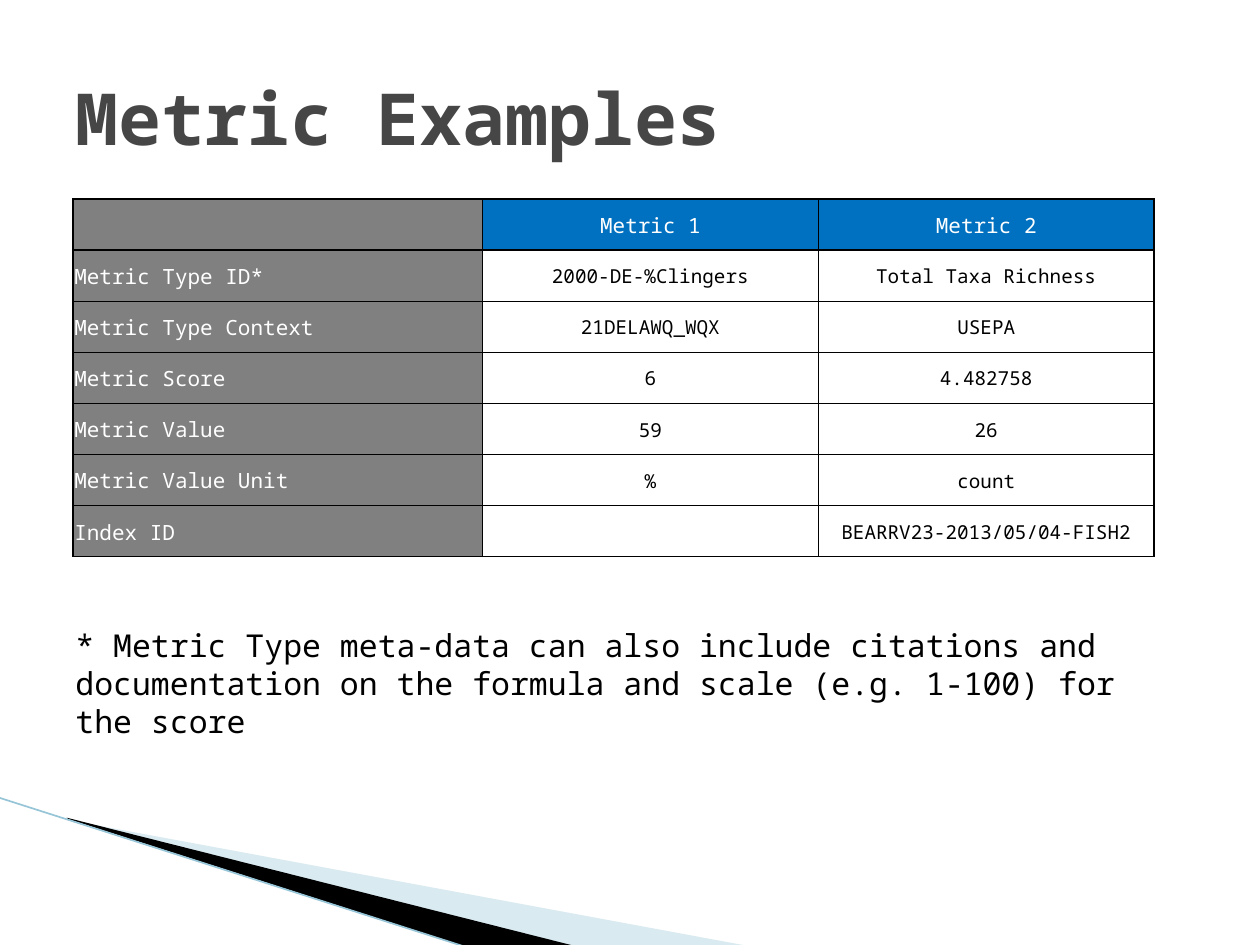
from lxml.etree import SubElement
from pptx import Presentation
from pptx.dml.color import RGBColor
from pptx.enum.shapes import MSO_CONNECTOR
from pptx.enum.text import MSO_ANCHOR, PP_ALIGN
from pptx.oxml.ns import qn
from pptx.util import Inches, Pt

FONT = "Noto Sans Mono"
COLORS = {
    "title": "464646",
    "text": "000000",
    "label_text": "FFFFFF",
    "label_fill": "808080",
    "header_fill": "0070C0",
    "border": "000000",
    "pale_wedge": "A0CBDC",
    "dark_wedge": "000000",
    "edge": "97C5D8",
}
ROWS = [
    ["", "Metric 1", "Metric 2"],
    ["Metric Type ID*", "2000-DE-%Clingers", "Total Taxa Richness"],
    ["Metric Type Context", "21DELAWQ_WQX", "USEPA"],
    ["Metric Score", "6", "4.482758"],
    ["Metric Value", "59", "26"],
    ["Metric Value Unit", "%", "count"],
    ["Index ID", "", "BEARRV23-2013/05/04-FISH2"],
]
NOTE = ("* Metric Type meta-data can also include citations and documentation "
        "on the formula and scale (e.g. 1-100) for the score")
CELL_FORMAT = {
    "vertical_anchor": MSO_ANCHOR.MIDDLE,
    "margin_left": Inches(0.01),
    "margin_right": Inches(0.01),
    "margin_top": Inches(0.01),
    "margin_bottom": 0,
}


def rgb(name):
    return RGBColor.from_string(COLORS[name])


def set_attributes(target, values):
    for name, value in values.items():
        setattr(target, name, value)


def write_text(paragraph, text, size, color, bold=False):
    run = paragraph.add_run()
    run.text = text
    set_attributes(run.font, {"name": FONT, "size": Pt(size), "bold": bold})
    run.font.color.rgb = rgb(color)


def add_text(slide, box, text, size, color, bold=False, anchor=MSO_ANCHOR.TOP):
    frame = slide.shapes.add_textbox(*map(Inches, box)).text_frame
    set_attributes(frame, {"word_wrap": True, "vertical_anchor": anchor})
    write_text(frame.paragraphs[0], text, size, color, bold)


def add_wedge(slide, left, top, points, color, opacity=100):
    """Draw a closed outline whose points are offsets from left and top."""
    corners = [(Inches(left + x), Inches(top + y)) for x, y in points]
    builder = slide.shapes.build_freeform(*corners[0])
    builder.add_line_segments(corners[1:], close=True)
    shape = builder.convert_to_shape()
    shape.shadow.inherit = False
    shape.line.fill.background()
    shape.fill.solid()
    shape.fill.fore_color.rgb = rgb(color)
    if opacity < 100:
        color_element = shape.fill._xPr.find(qn("a:solidFill"))[0]
        SubElement(color_element, qn("a:alpha"), val=str(opacity * 1000))


def add_corner_decoration(slide, left, top):
    add_wedge(slide, left, top,
              [(0.55, 0.18), (5.95, 1.18), (4.56, 1.18), (0.55, 0.17)],
              "pale_wedge", opacity=40)
    add_wedge(slide, left, top,
              [(0.53, 0.16), (4.57, 1.18), (3.72, 1.19), (0.54, 0.17)],
              "dark_wedge")
    edge = slide.shapes.add_connector(
        MSO_CONNECTOR.STRAIGHT, Inches(left - 0.01), Inches(top),
        Inches(left + 3.71), Inches(top + 1.19))
    edge.line.color.rgb = rgb("edge")
    edge.line.width = Pt(0.95)
    SubElement(edge._element.spPr, qn("a:effectLst"))


def add_borders(cell):
    """Put a thin line on all four sides; borders must precede the fill."""
    properties = cell._tc.get_or_add_tcPr()
    for side in ("lnL", "lnR", "lnT", "lnB"):
        line = SubElement(properties, qn(f"a:{side}"), w=str(Pt(1)))
        fill = SubElement(line, qn("a:solidFill"))
        SubElement(fill, qn("a:srgbClr"), val=COLORS["border"])


def format_cell(cell, text, row, column):
    add_borders(cell)
    set_attributes(cell, CELL_FORMAT)
    is_label = row == 0 or column == 0
    if is_label:
        cell.fill.solid()
        cell.fill.fore_color.rgb = rgb("label_fill" if column == 0 else "header_fill")
    else:
        cell.fill.background()
    if text:
        paragraph = cell.text_frame.paragraphs[0]
        paragraph.alignment = PP_ALIGN.LEFT if column == 0 else PP_ALIGN.CENTER
        write_text(paragraph, text, 12 if is_label else 11,
                   "label_text" if is_label else "text")


def add_metric_table(slide, left, top, width, height):
    label_width = 3.25
    column_count = len(ROWS[0])
    value_width = (width - label_width) / (column_count - 1)
    frame = slide.shapes.add_table(len(ROWS), column_count,
                                   *map(Inches, (left, top, width, height)))
    table = frame.table
    set_attributes(table, {"first_row": False, "horz_banding": False})
    for index, column in enumerate(table.columns):
        column.width = Inches(value_width if index else label_width)
    for row, texts in enumerate(ROWS):
        table.rows[row].height = Inches(height / len(ROWS))
        for column, text in enumerate(texts):
            format_cell(table.cell(row, column), text, row, column)


def main():
    presentation = Presentation()
    set_attributes(presentation, {"slide_width": Inches(10),
                                  "slide_height": Inches(7.5)})
    slide = presentation.slides.add_slide(presentation.slide_layouts[6])
    add_corner_decoration(slide, 0, 6.33)
    add_text(slide, (0.5, 0.3, 9, 1.25), "Metric Examples", 41, "title",
             bold=True, anchor=MSO_ANCHOR.MIDDLE)
    add_metric_table(slide, 0.58, 1.58, 8.58, 2.84)
    add_text(slide, (0.5, 4.92, 8.67, 0.71), NOTE, 18, "text")
    presentation.save("out.pptx")


if __name__ == "__main__":
    main()
